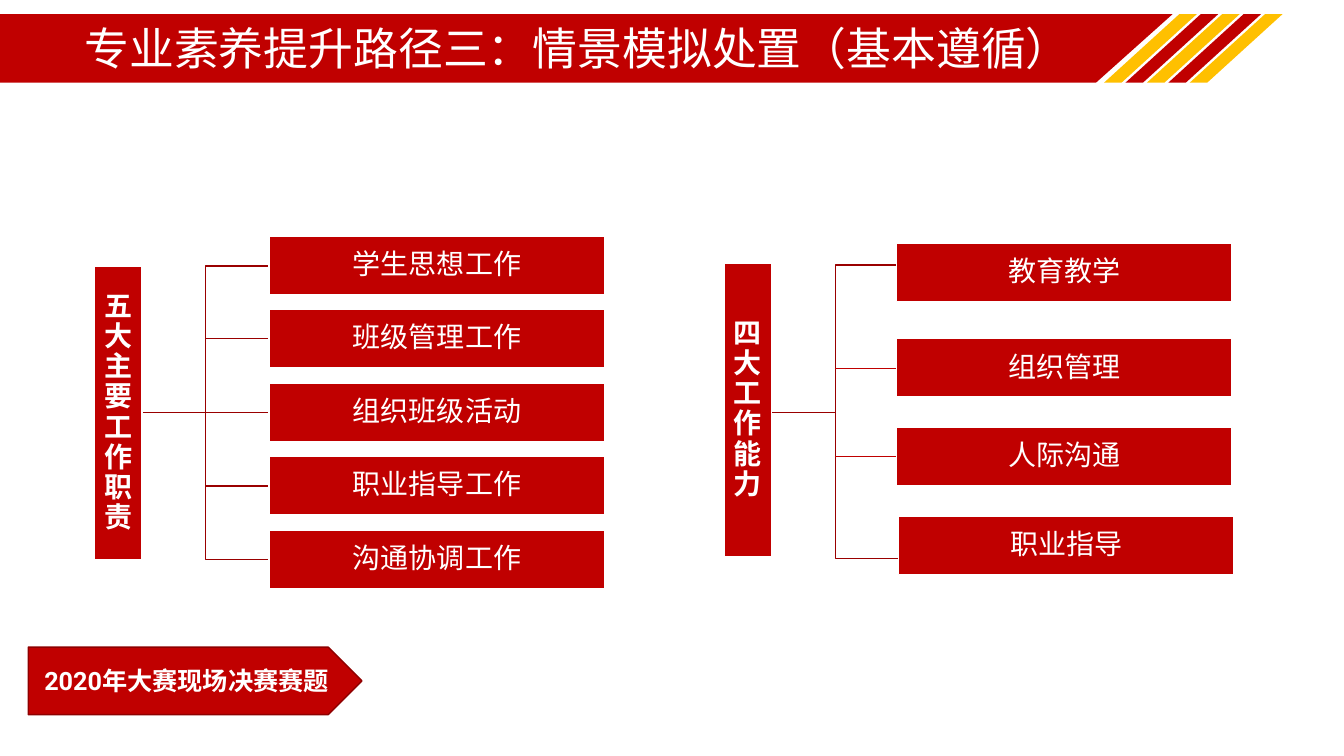
from pptx import Presentation
from pptx.dml.color import RGBColor
from pptx.enum.shapes import MSO_CONNECTOR, MSO_SHAPE
from pptx.enum.text import MSO_ANCHOR, PP_ALIGN
from pptx.oxml.ns import qn
from pptx.util import Inches, Pt
from lxml import etree

FONT = "Roboto"
RED, GOLD, WHITE, DARK_RED = "C00000", "FFC000", "FFFFFF", "9A0000"


def rgb(value):
    return RGBColor.from_string(value)


def add_block(kind, box, fill, line=None, text="", size=20, bold=False):
    """Add a flat filled shape; box is left, top, width, height in inches."""
    sp = s.shapes.add_shape(kind, *[Inches(v) for v in box])
    sp.shadow.inherit = False
    sp.fill.solid()
    sp.fill.fore_color.rgb = rgb(fill)
    if line:
        sp.line.color.rgb = rgb(line)
        sp.line.width = Pt(1)
    else:
        sp.line.fill.background()
    if text:
        tf = sp.text_frame
        tf.word_wrap = True
        tf.vertical_anchor = MSO_ANCHOR.MIDDLE
        p = tf.paragraphs[0]
        p.text = text
        p.alignment = PP_ALIGN.CENTER
        p.font.name = FONT
        p.font.size = Pt(size)
        p.font.bold = bold
        p.font.color.rgb = rgb(WHITE)
    return sp


prs = Presentation()
prs.slide_width, prs.slide_height = Inches(13.33), Inches(7.5)
s = prs.slides.add_slide(prs.slide_layouts[6])

# Title banner with slanted stripes
banner = add_block(MSO_SHAPE.PARALLELOGRAM, (-0.91, 0.14, 12.54, 0.68), RED)
banner.adjustments[0] = 1.117
for i in range(5):
    color = RED if i % 2 else GOLD
    stripe = add_block(MSO_SHAPE.PARALLELOGRAM, (10.95 + 0.2125 * i, 0.14, 0.92, 0.68), color)
    stripe.adjustments[0] = 1.098

title = s.shapes.add_textbox(Inches(0.74), Inches(0.37), Inches(11.5), Inches(0.27))
tf = title.text_frame
tf.word_wrap = True
tf.vertical_anchor = MSO_ANCHOR.MIDDLE
p = tf.paragraphs[0]
p.text = "专业素养提升路径三：情景模拟处置（基本遵循）"
p.line_spacing = 0.9
p.font.name = FONT
p.font.size = Pt(32)
p.font.color.rgb = rgb(WHITE)

# Elbow branches: start x, end x, height of the stem, heights of the ends
for x1, x2, stem_y, ends in [
    (1.41, 2.67, 4.09, [2.64, 3.36, 4.82, 5.55]),
    (7.66, 8.91, 4.09, [2.63, 5.54]),
]:
    mid = (x1 + x2) / 2
    for end_y in ends:
        fb = s.shapes.build_freeform(Inches(x1), Inches(stem_y))
        fb.add_line_segments(
            [(Inches(x), Inches(y)) for x, y in [(mid, stem_y), (mid, end_y), (x2, end_y)]],
            close=False,
        )
        elbow = fb.convert_to_shape()
        elbow.shadow.inherit = False
        elbow.fill.background()
        elbow.line.color.rgb = rgb(DARK_RED)
        elbow.line.width = Pt(1)

# Straight branches
for x1, x2, y, color, width in [
    (1.41, 2.67, 4.09, DARK_RED, 1),
    (8.28, 8.91, 3.65, RED, 0.5),
    (8.28, 8.91, 4.53, RED, 0.5),
]:
    branch = s.shapes.add_connector(
        MSO_CONNECTOR.STRAIGHT, Inches(x1), Inches(y), Inches(x2), Inches(y)
    )
    branch.line.color.rgb = rgb(color)
    branch.line.width = Pt(width)
    etree.SubElement(branch.element.spPr, qn("a:effectLst"))

# Tree boxes: the two roots, then their items
duties = ["学生思想工作", "班级管理工作", "组织班级活动", "职业指导工作", "沟通协调工作"]
nodes = [
    ("五大主要工作职责", 0.94, 2.64, 0.47, 2.91, True),
    ("四大工作能力", 7.18, 2.61, 0.47, 2.91, True),
]
nodes += [(duty, 2.67, 2.34 + 0.73 * i, 3.33, 0.58, False) for i, duty in enumerate(duties)]
nodes += [
    (skill, x, y, 3.33, 0.58, False)
    for skill, x, y in [
        ("教育教学", 8.89, 2.41),
        ("组织管理", 8.89, 3.36),
        ("人际沟通", 8.89, 4.24),
        ("职业指导", 8.91, 5.12),
    ]
]
for text, x, y, w, h, bold in nodes:
    node = add_block(MSO_SHAPE.RECTANGLE, (x, y, w, h), RED, WHITE, text, bold=bold)
    tf = node.text_frame
    tf.margin_left = tf.margin_right = tf.margin_top = tf.margin_bottom = Inches(0.02)
    tf.paragraphs[0].line_spacing = 0.9
    tf.paragraphs[0].space_after = Pt(7)

add_block(
    MSO_SHAPE.PENTAGON, (0.28, 6.42, 3.31, 0.67), RED, "8E0000",
    "2020年大赛现场决赛赛题", size=18, bold=True,
)

prs.save("out.pptx")
